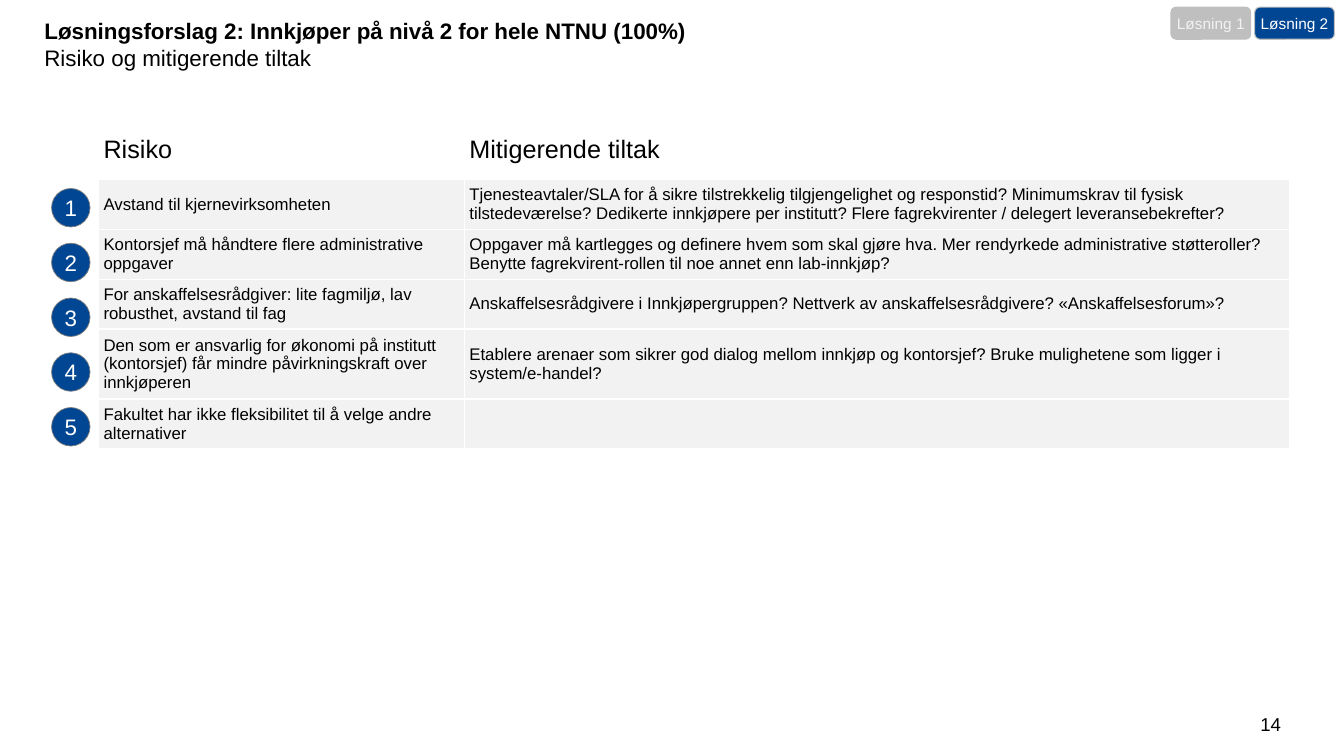
from lxml import etree
from pptx import Presentation
from pptx import util as u
from pptx.dml.color import RGBColor
from pptx.enum import shapes, text
from pptx.oxml.ns import qn

TITLE = "Løsningsforslag 2: Innkjøper på nivå 2 for hele NTNU (100%)"
SUBTITLE = "Risiko og mitigerende tiltak"
PAGE_NUMBER = "14"
HEADINGS = ("Risiko", "Mitigerende tiltak")
RISKS = [
    ("Avstand til kjernevirksomheten",
     "Tjenesteavtaler/SLA for å sikre tilstrekkelig tilgjengelighet og responstid? "
     "Minimumskrav til fysisk tilstedeværelse? Dedikerte innkjøpere per institutt? "
     "Flere fagrekvirenter / delegert leveransebekrefter?"),
    ("Kontorsjef må håndtere flere administrative oppgaver",
     "Oppgaver må kartlegges og definere hvem som skal gjøre hva. "
     "Mer rendyrkede administrative støtteroller? \n"
     "Benytte fagrekvirent-rollen til noe annet enn lab-innkjøp?"),
    ("For anskaffelsesrådgiver: lite fagmiljø, lav robusthet, avstand til fag",
     "Anskaffelsesrådgivere i Innkjøpergruppen? Nettverk av anskaffelsesrådgivere? "
     "«Anskaffelsesforum»?"),
    ("Den som er ansvarlig for økonomi på institutt (kontorsjef) "
     "får mindre påvirkningskraft over innkjøperen",
     "Etablere arenaer som sikrer god dialog mellom innkjøp og kontorsjef? "
     "Bruke mulighetene som ligger i system/e-handel?"),
    ("Fakultet har ikke fleksibilitet til å velge andre alternativer", ""),
]
THEME = {
    "font": "Arial",
    "black": "000000", "white": "FFFFFF", "blue": "014693",
    "band": "F2F2F2", "silver": "BFBFBF", "outline": "808080",
    "title": 16, "heading": 18, "body": 12, "badge": 16, "tab": 11, "page": 13.3,
}
TABS = [("Løsning 1", "silver", "band"), ("Løsning 2", "blue", "white")]

COLUMN_WIDTHS = (9.22, 20.78)
HEADING_HEIGHT, ROW_HEIGHT = 1.5, 1.2
TABLE_LEFT, TABLE_TOP = 2.49, 3.02
CELL_MARGIN = 0.12
BADGE_LEFT, BADGE_TOP, BADGE_SIZE, BADGE_STEP = 1.3, 4.75, 0.97, 1.38
TAB_LEFT, TAB_TOP, TAB_WIDTH, TAB_HEIGHT, TAB_STEP = 29.51, 0.18, 2.01, 0.81, 2.11


def color(name):
    return RGBColor.from_string(THEME[name])


def apply(target, values):
    for name, value in values.items():
        setattr(target, name, value)


def margins(size):
    return {f"margin_{side}": u.Cm(size) for side in ("left", "top", "right", "bottom")}


def write(paragraph, words, size, tone="black", bold=False):
    for index, line in enumerate(words.split("\n")):
        if index:
            paragraph.add_line_break()
        if line:
            run = paragraph.add_run()
            run.text = line
            apply(run.font, {"name": THEME["font"], "size": u.Pt(THEME[size]), "bold": bold})
            run.font.color.rgb = color(tone)


def add_text_box(slide, *box):
    frame = slide.shapes.add_textbox(*map(u.Cm, box)).text_frame
    frame.word_wrap = True
    return frame


def add_label(slide, kind, box, words, fill, outline, weight, size, tone):
    shape = slide.shapes.add_shape(kind, *map(u.Cm, box))
    shape.shadow.inherit = False
    shape.fill.solid()
    shape.fill.fore_color.rgb = color(fill)
    shape.line.color.rgb = color(outline)
    shape.line.width = u.Pt(weight)
    frame = shape.text_frame
    apply(frame, {**margins(0), "vertical_anchor": text.MSO_ANCHOR.MIDDLE, "word_wrap": True})
    frame.paragraphs[0].alignment = text.PP_ALIGN.CENTER
    write(frame.paragraphs[0], words, size, tone)


def border_cell(cell):
    properties = cell._tc.get_or_add_tcPr()
    for index, side in enumerate(("lnL", "lnR", "lnT", "lnB")):
        line = etree.Element(qn(f"a:{side}"), w=str(u.Pt(1)))
        fill = etree.SubElement(line, qn("a:solidFill"))
        etree.SubElement(fill, qn("a:srgbClr"), val=THEME["white"])
        properties.insert(index, line)


def add_risk_table(slide):
    rows = [HEADINGS, *RISKS]
    heights = [HEADING_HEIGHT] + [ROW_HEIGHT] * len(RISKS)
    box = (TABLE_LEFT, TABLE_TOP, sum(COLUMN_WIDTHS), sum(heights))
    table = slide.shapes.add_table(len(rows), len(HEADINGS), *map(u.Cm, box)).table
    apply(table, {"first_row": False, "horz_banding": False})
    for column, width in zip(table.columns, COLUMN_WIDTHS):
        column.width = u.Cm(width)
    for index, (row, height, contents) in enumerate(zip(table.rows, heights, rows)):
        row.height = u.Cm(height)
        for cell, words in zip(row.cells, contents):
            apply(cell, {**margins(CELL_MARGIN), "vertical_anchor": text.MSO_ANCHOR.MIDDLE})
            cell.fill.solid()
            cell.fill.fore_color.rgb = color("band" if index else "white")
            border_cell(cell)
            write(cell.text_frame.paragraphs[0], words, "body" if index else "heading")


def main():
    presentation = Presentation()
    apply(presentation, {"slide_width": u.Cm(33.87), "slide_height": u.Cm(19.05)})
    slide = presentation.slides.add_slide(presentation.slide_layouts[6])

    page = add_text_box(slide, 31.39, 17.83, 1.27, 1.02).paragraphs[0]
    page.alignment = text.PP_ALIGN.CENTER
    write(page, PAGE_NUMBER, "page")

    add_risk_table(slide)

    title = add_text_box(slide, 1.12, 0.43, 31.98, 1.37)
    apply(title, margins(0))
    write(title.paragraphs[0], TITLE, "title", bold=True)
    write(title.add_paragraph(), SUBTITLE, "title")

    for index in range(len(RISKS)):
        box = (BADGE_LEFT, BADGE_TOP + index * BADGE_STEP, BADGE_SIZE, BADGE_SIZE)
        add_label(slide, shapes.MSO_SHAPE.OVAL, box, str(index + 1),
                  "blue", "outline", 0.5, "badge", "white")

    for index, (words, fill, tone) in enumerate(TABS):
        box = (TAB_LEFT + index * TAB_STEP, TAB_TOP, TAB_WIDTH, TAB_HEIGHT)
        add_label(slide, shapes.MSO_SHAPE.ROUNDED_RECTANGLE, box, words,
                  fill, "silver", 0.75, "tab", tone)

    presentation.save("out.pptx")


if __name__ == "__main__":
    main()
